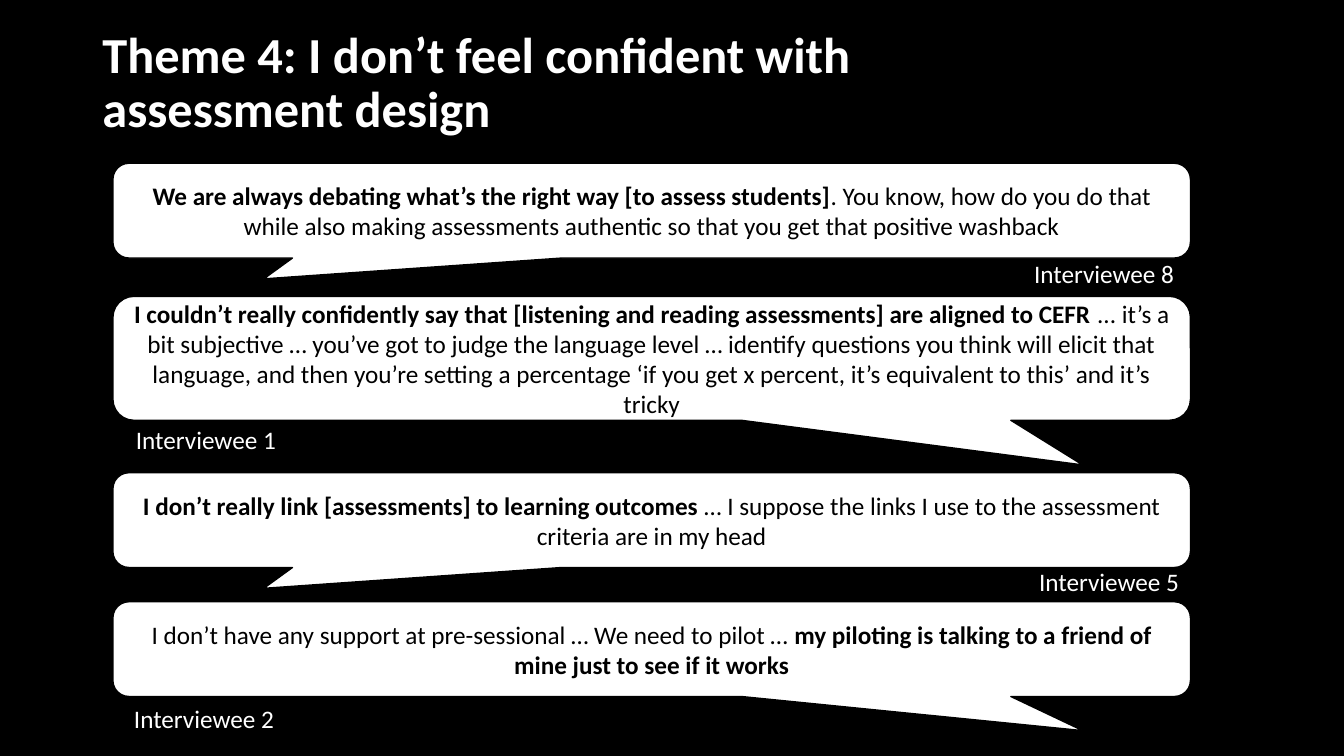
from pptx import Presentation
from pptx.dml.color import RGBColor as Color
from pptx.enum.shapes import MSO_SHAPE as Preset
from pptx.enum.text import MSO_ANCHOR as Anchor, MSO_AUTO_SIZE as Fit, PP_ALIGN as Align
from pptx.util import Pt

TITLE = "Theme 4: I don’t feel confident with assessment design"
QUOTES = [
    {"speaker": "Interviewee 8", "tail": "left", "top": 116.64, "height": 67.68,
     "label": (731.5, 180.7),
     "spans": [("We are always debating what’s the right way [to assess students]", True),
               (". You know, how do you do that while also making assessments authentic "
                "so that you get that positive washback", False)]},
    {"speaker": "Interviewee 1", "tail": "right", "top": 211.68, "height": 88.56,
     "label": (90, 299.5),
     "spans": [("I couldn’t really confidently say that [listening and reading assessments] "
                "are aligned to CEFR", True),
               (" ... it’s a bit subjective … you’ve got to judge the language level … "
                "identify questions you think will elicit that language, and then you’re "
                "setting a percentage ‘if you get x percent, it’s equivalent to this’ "
                "and it’s tricky", False)]},
    {"speaker": "Interviewee 5", "tail": "left", "top": 337.68, "height": 67.68,
     "label": (735.1, 401),
     "spans": [("I don’t really link [assessments] to learning outcomes", True),
               (" … I suppose the links I use to the assessment criteria are in my head", False)]},
    {"speaker": "Interviewee 2", "tail": "right", "top": 429.84, "height": 67.68,
     "label": (88.6, 499),
     "spans": [("I don’t have any support at pre-sessional … We need to pilot … ", False),
               ("my piloting is talking to a friend of mine just to see if it works", True)]},
]
TAILS = {"left": (-0.36, 0.72, 0.17), "right": (0.4, 0.86, 0.17)}
BUBBLE_LEFT, BUBBLE_WIDTH = 80.64, 769.68
LABEL_SIZE = (115.9, 28.8)
THEME = {"dark": Color(0, 0, 0), "light": Color(255, 255, 255), "font": "Calibri",
         "title": Pt(36), "body": Pt(18), "outline": Pt(1)}


def apply(target, values):
    """Set each named attribute on the target."""
    for name, value in values.items():
        setattr(target, name, value)


def write(para, spans, size, color):
    """Fill a paragraph with (text, bold) spans in one size and colour."""
    for text, bold in spans:
        span = para.add_run()
        span.text = text
        apply(span.font, {"name": THEME["font"], "size": size, "bold": bold})
        span.font.color.rgb = color


def add_title(page):
    """Place and format the title placeholder."""
    title = page.shapes.title
    apply(title, {"left": Pt(66), "top": Pt(8), "width": Pt(709), "height": Pt(104.4)})
    apply(title.text_frame, {"vertical_anchor": Anchor.MIDDLE, "word_wrap": True,
                             "auto_size": Fit.NONE})
    para = title.text_frame.paragraphs[0]
    apply(para, {"alignment": Align.LEFT, "line_spacing": 0.9})
    write(para, [(TITLE, True)], THEME["title"], THEME["light"])


def add_bubble(page, quote):
    """Draw the speech bubble of one quote."""
    bubble = page.shapes.add_shape(
        Preset.ROUNDED_RECTANGULAR_CALLOUT, Pt(BUBBLE_LEFT), Pt(quote["top"]),
        Pt(BUBBLE_WIDTH), Pt(quote["height"]))
    for index, value in enumerate(TAILS[quote["tail"]]):
        bubble.adjustments[index] = value
    bubble.shadow.inherit = False
    bubble.fill.solid()
    bubble.fill.fore_color.rgb = THEME["light"]
    bubble.line.color.rgb = THEME["dark"]
    bubble.line.width = THEME["outline"]
    apply(bubble.text_frame, {"vertical_anchor": Anchor.MIDDLE, "word_wrap": True})
    para = bubble.text_frame.paragraphs[0]
    para.alignment = Align.CENTER
    write(para, quote["spans"], THEME["body"], THEME["dark"])


def add_label(page, quote):
    """Name the speaker of one quote."""
    box = page.shapes.add_textbox(*map(Pt, quote["label"] + LABEL_SIZE))
    apply(box.text_frame, {"word_wrap": False, "auto_size": Fit.SHAPE_TO_FIT_TEXT})
    write(box.text_frame.paragraphs[0], [(quote["speaker"], False)],
          THEME["body"], THEME["light"])


def main():
    """Build and save the deck."""
    deck = Presentation()
    apply(deck, {"slide_width": Pt(960), "slide_height": Pt(540)})
    page = deck.slides.add_slide(deck.slide_layouts[5])
    page.background.fill.solid()
    page.background.fill.fore_color.rgb = THEME["dark"]
    add_title(page)
    for add_part in (add_bubble, add_label):
        for quote in QUOTES:
            add_part(page, quote)
    deck.save("out.pptx")


if __name__ == "__main__":
    main()
